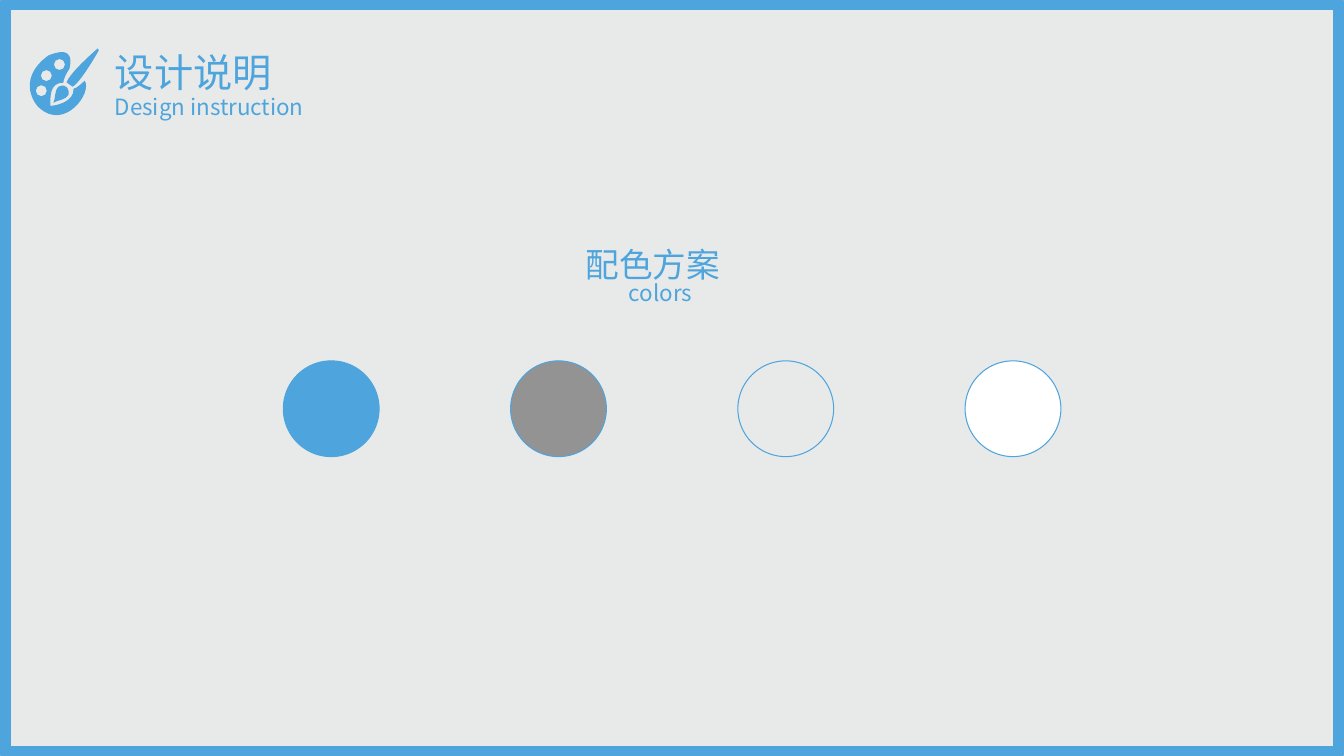
from lxml.etree import SubElement
from pptx import Presentation
from pptx.dml.color import RGBColor
from pptx.enum.shapes import MSO_SHAPE
from pptx.enum.text import MSO_ANCHOR, MSO_AUTO_SIZE, PP_ALIGN
from pptx.oxml.ns import qn
from pptx.util import Pt

SCALE = 9144
BLUE, GRAY, PALE, WHITE = "4EA4DD", "939393", "E8EAE9", "FFFFFF"
FACE = "Noto Sans CJK SC"
FRAME = {"word_wrap": True, "auto_size": MSO_AUTO_SIZE.SHAPE_TO_FIT_TEXT,
         "vertical_anchor": MSO_ANCHOR.TOP}
BOARD = [(73, 88), (74, 101), (55, 105), (50, 105), (50, 96), (49, 82),
         (63, 82), (62, 81), (66, 72), (69, 68), (74, 45), (56, 52),
         (48, 55), (14, 80), (37, 106), (39, 107), (64, 130), (92, 92),
         (84, 80), (83, 81), (76, 88), (73, 88)]
STEM = [(72, 86), (80, 82), (98, 50), (98, 50), (97, 48), (97, 48),
        (97, 48), (97, 48), (69, 72), (66, 82), (67, 82), (70, 85), (72, 86)]
TIP = [(58, 86), (54, 89), (55, 99), (53, 102), (57, 99), (64, 100),
       (68, 94), (69, 90), (67, 82), (58, 86)]
HOLES = [(59, 64), (41, 90), (46, 75)]


def px(*sizes):
    return [round(size * SCALE) for size in sizes]


def paint(color, value):
    color.rgb = RGBColor.from_string(value)


def apply(target, values):
    for name, value in values.items():
        setattr(target, name, value)


def fill(shape, value):
    shape.fill.solid()
    paint(shape.fill.fore_color, value)


def write(shape, box, text, size):
    apply(shape, dict(zip(("left", "top", "width", "height"), px(*box))))
    frame = shape.text_frame
    frame.text = text
    apply(frame, FRAME)
    para = frame.paragraphs[0]
    para.alignment = PP_ALIGN.JUSTIFY
    run = para.runs[0]
    apply(run.font, {"name": FACE, "size": Pt(size)})
    paint(run.font.color, BLUE)
    SubElement(run.font._element, qn("a:ea")).set("typeface", FACE)


def label(slide, box, text, size):
    write(slide.shapes.add_textbox(*px(*box)), box, text, size)


def outline(slide, kind, box, width):
    shape = slide.shapes.add_shape(kind, *px(*box))
    shape.shadow.inherit = False
    shape.line.width = Pt(width)
    paint(shape.line.color, BLUE)
    return shape


def ring(x, y, r=5.5, k=3):
    turn = [(0, -r), (k, -r), (r, -k), (r, 0), (r, k), (k, r), (0, r),
            (-k, r), (-r, k), (-r, 0), (-r, -k), (-k, -r), (0, -r)]
    return [(x + dx, y + dy) for dx, dy in turn]


def bend(shape):
    lines = list(shape._element.iter(qn("a:lnTo")))
    for first, *rest in zip(lines[::3], lines[1::3], lines[2::3]):
        first.tag = qn("a:cubicBezTo")
        for line in rest:
            first.append(line[0])
            line.getparent().remove(line)


def palette(slide):
    loops = [BOARD, STEM, TIP] + [ring(*hole) for hole in HOLES]
    form = slide.shapes.build_freeform(*px(*BOARD[0]), scale=1.0)
    for n, loop in enumerate(loops):
        if n:
            form.move_to(*px(*loop[0]))
        form.add_line_segments([px(*point) for point in loop[1:]], close=True)
    shape = form.convert_to_shape()
    bend(shape)
    shape.shadow.inherit = False
    fill(shape, BLUE)
    shape.line.fill.background()


def main():
    deck = Presentation()
    deck.slide_width, deck.slide_height = px(1333, 750)
    slide = deck.slides.add_slide(deck.slide_layouts[5])
    fill(slide.background, PALE)
    border = outline(slide, MSO_SHAPE.RECTANGLE, (5, 4, 1323, 742), 8.5)
    border.fill.background()
    write(slide.shapes.title, (104, 43, 223, 57), "设计说明", 28)
    label(slide, (104, 87, 223, 37), "Design instruction", 16)
    for n, color in enumerate((BLUE, GRAY, PALE, WHITE)):
        box = 281 + 225.4 * n, 358, 95, 95
        fill(outline(slide, MSO_SHAPE.OVAL, box, 0), color)
    label(slide, (571, 237, 192, 50), "配色方案", 24)
    label(slide, (614, 272, 106, 39), "colors", 16)
    palette(slide)
    deck.save("out.pptx")


if __name__ == "__main__":
    main()
